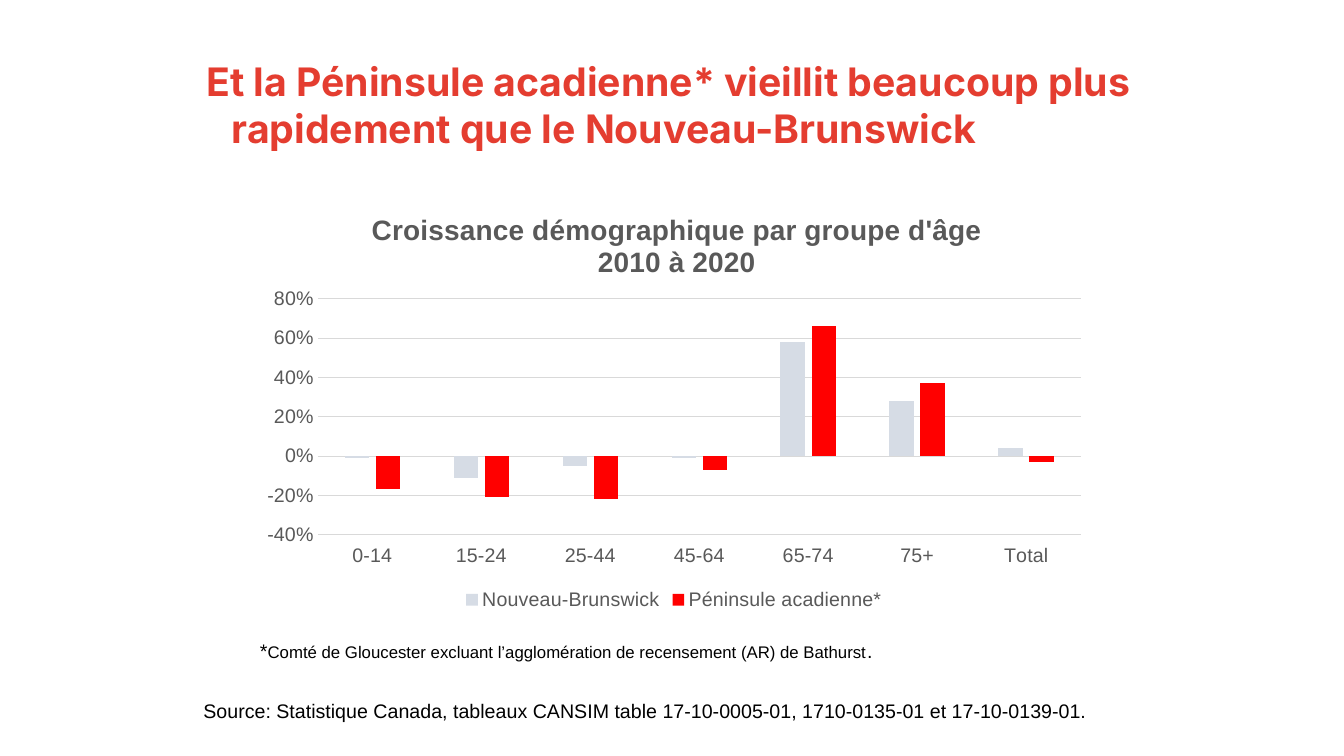
from dataclasses import dataclass

from lxml import etree
from pptx import Presentation
from pptx import util as u
from pptx.chart import data as chart_data
from pptx.dml import color
from pptx.enum import chart as ch, text
from pptx.oxml import ns


@dataclass(frozen=True)
class Theme:
    heading_font: str = "Inter"
    body_font: str = "Arial"
    heading: str = "E43D30"
    ink: str = "000000"
    grey: str = "595959"
    rule: str = "D9D9D9"
    province: str = "D6DCE5"
    peninsula: str = "FF0000"
    heading_size: float = 28
    chart_title_size: float = 20
    body_size: float = 14
    small_size: float = 12


@dataclass(frozen=True)
class Box:
    left: float
    top: float
    width: float
    height: float

    def lengths(self) -> tuple:
        return tuple(u.Pt(v) for v in (self.left, self.top, self.width, self.height))


@dataclass(frozen=True)
class Series:
    name: str
    values: tuple
    fill: str


@dataclass(frozen=True)
class Note:
    box: Box
    pieces: tuple  # (text, size) pairs


THEME = Theme()

HEADING = ("Et la Péninsule acadienne* vieillit beaucoup plus "
           "rapidement que le Nouveau-Brunswick")
HEADING_BOX = Box(122.4, 37.4, 699.1, 111.6)

CHART_TITLE = "Croissance démographique par groupe d'âge\n2010 à 2020"
CHART_BOX = Box(178.6, 138.2, 605.5, 301)
AGE_GROUPS = ("0-14", "15-24", "25-44", "45-64", "65-74", "75+", "Total")
GROWTH = (
    Series("Nouveau-Brunswick",
           (-0.01, -0.11, -0.05, -0.01, 0.58, 0.28, 0.04), THEME.province),
    Series("Péninsule acadienne*",
           (-0.17, -0.21, -0.22, -0.07, 0.66, 0.37, -0.03), THEME.peninsula),
)

NOTES = (
    Note(Box(178.6, 452.9, 589.7, 24.5), (
        ("*", THEME.body_size),
        ("Comté de Gloucester excluant l’agglomération de recensement (AR) de Bathurst",
         THEME.small_size),
        (".", THEME.body_size))),
    Note(Box(138.2, 495.4, 673.9, 24.5), (
        ("Source: Statistique Canada, tableaux CANSIM table 17-10-0005-01, "
         "1710-0135-01 et 17-10-0139-01.", THEME.body_size),)),
)


def style(font, size: float, fill: str, name: str = THEME.body_font,
          bold: bool = False) -> None:
    font.size, font.name, font.bold = u.Pt(size), name, bold
    font.color.rgb = color.RGBColor.from_string(fill)


def draw_rule(line) -> None:
    line.width = u.Pt(0.75)
    line.color.rgb = color.RGBColor.from_string(THEME.rule)


def place(parent, index: int, **fractions: float) -> None:
    """Give a chart part a manual layout, in fractions of the chart."""
    for old in parent.findall(ns.qn("c:layout")):
        parent.remove(old)
    layout = etree.Element(ns.qn("c:layout"))
    manual = etree.SubElement(layout, ns.qn("c:manualLayout"))
    settings = {"xMode": "edge", "yMode": "edge", **fractions}
    if "w" in fractions:
        settings = {"layoutTarget": "inner", **settings}
    for tag, value in settings.items():
        etree.SubElement(manual, ns.qn(f"c:{tag}")).set("val", str(value))
    parent.insert(index, layout)


def add_heading(slide) -> None:
    heading = slide.shapes.title
    heading.left, heading.top, heading.width, heading.height = HEADING_BOX.lengths()
    frame = heading.text_frame
    frame.text = HEADING
    frame.word_wrap = True
    frame.auto_size = text.MSO_AUTO_SIZE.NONE
    frame.vertical_anchor = text.MSO_ANCHOR.TOP
    line = frame.paragraphs[0]
    line.alignment = text.PP_ALIGN.LEFT
    line.line_spacing = 1.0
    line.space_before = u.Pt(0)
    # Hanging indent
    properties = line._p.get_or_add_pPr()
    properties.set("marL", str(u.Pt(36)))
    properties.set("indent", str(u.Pt(-18)))
    style(line.runs[0].font, THEME.heading_size, THEME.heading,
          THEME.heading_font, bold=True)


def add_growth_chart(slide) -> None:
    figures = chart_data.CategoryChartData(number_format="0%")
    figures.categories = AGE_GROUPS
    for series in GROWTH:
        figures.add_series(series.name, series.values)
    chart = slide.shapes.add_chart(
        ch.XL_CHART_TYPE.COLUMN_CLUSTERED, *CHART_BOX.lengths(), figures).chart
    style(chart.font, THEME.body_size, THEME.grey)

    # Title
    chart.has_title = True
    title = chart.chart_title
    title.text_frame.text = CHART_TITLE
    for line in title.text_frame.paragraphs:
        style(line.runs[0].font, THEME.chart_title_size, THEME.grey, bold=True)
    title.include_in_layout = False
    place(title._element, 1, x=0.14, y=0.04)

    # Columns
    columns = chart.plots[0]
    columns.gap_width, columns.overlap = 219, -27
    columns.vary_by_categories = False
    for drawn, series in zip(columns.series, GROWTH):
        drawn.invert_if_negative = False
        drawn.format.fill.solid()
        drawn.format.fill.fore_color.rgb = color.RGBColor.from_string(series.fill)
    place(chart._chartSpace.chart.plotArea, 0, x=0.08, y=0.25, w=0.9, h=0.56)

    # Axes
    ages, growth = chart.category_axis, chart.value_axis
    for axis in (ages, growth):
        axis.major_tick_mark = axis.minor_tick_mark = ch.XL_TICK_MARK.NONE
        style(axis.tick_labels.font, THEME.body_size, THEME.grey)
    ages.tick_label_position = ch.XL_TICK_LABEL_POSITION.LOW
    draw_rule(ages.format.line)
    growth.minimum_scale, growth.maximum_scale, growth.major_unit = -0.4, 0.8, 0.2
    growth.tick_labels.number_format = "0%"
    growth.tick_labels.number_format_is_linked = False
    growth.format.line.fill.background()
    draw_rule(growth.major_gridlines.format.line)

    # Legend
    chart.has_legend = True
    chart.legend.position = ch.XL_LEGEND_POSITION.BOTTOM
    chart.legend.include_in_layout = False
    style(chart.legend.font, THEME.body_size, THEME.grey)


def add_note(slide, note: Note) -> None:
    frame = slide.shapes.add_textbox(*note.box.lengths()).text_frame
    frame.word_wrap = True
    for words, size in note.pieces:
        run = frame.paragraphs[0].add_run()
        run.text = words
        style(run.font, size, THEME.ink)


def main() -> None:
    deck = Presentation()
    deck.slide_width, deck.slide_height = u.Pt(960), u.Pt(540)
    title_only = deck.slide_layouts[5]
    slide = deck.slides.add_slide(title_only)
    add_heading(slide)
    add_growth_chart(slide)
    for note in NOTES:
        add_note(slide, note)
    deck.save("out.pptx")


if __name__ == "__main__":
    main()
